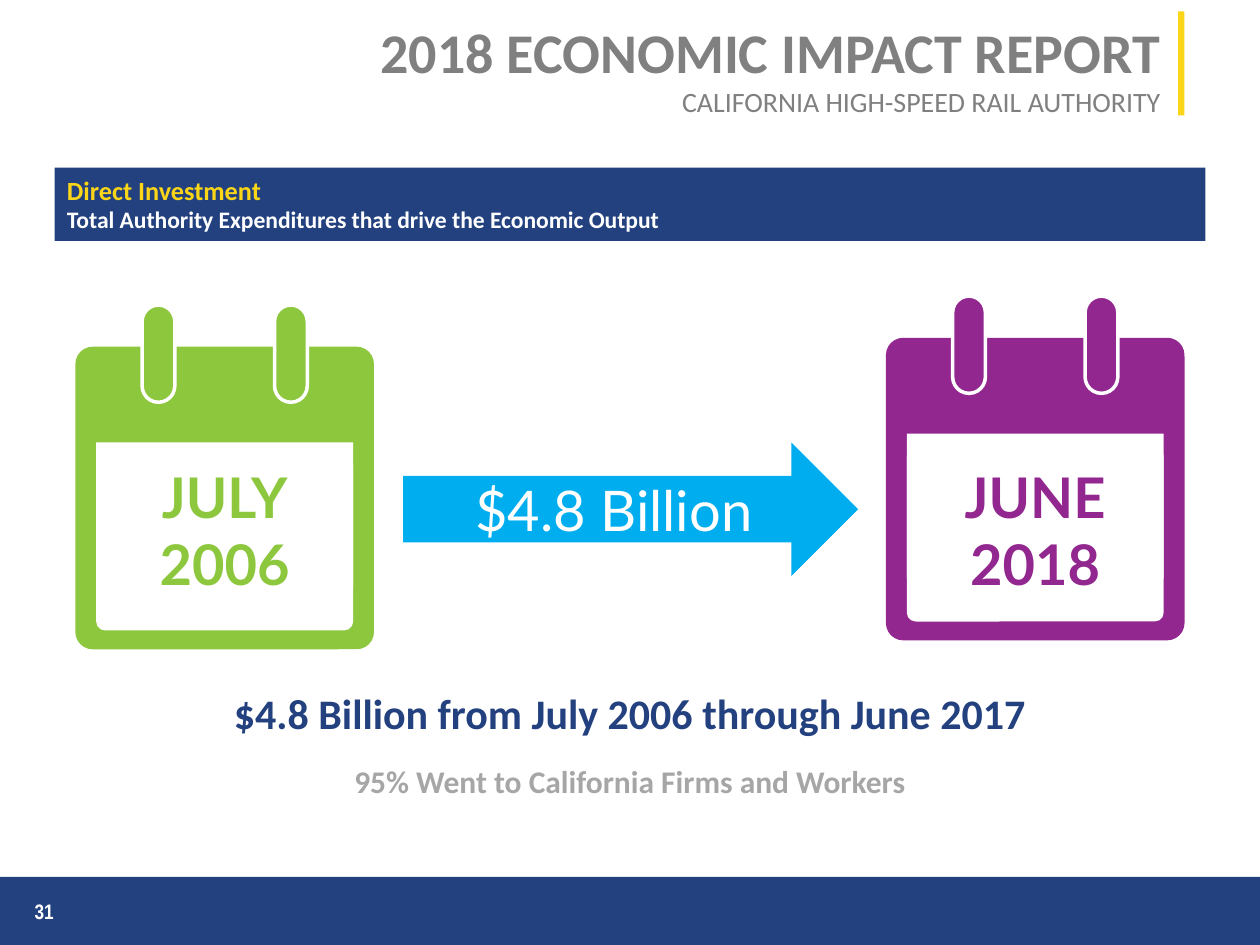
import pptx
import pptx.util
import pptx.dml.color
import pptx.enum.shapes
import pptx.enum.text
from pptx.util import Cm

SHAPE = pptx.enum.shapes.MSO_SHAPE
ALIGN = pptx.enum.text.PP_ALIGN
ANCHOR = pptx.enum.text.MSO_ANCHOR

THEME = {
    "navy": "23417F", "yellow": "FBD518", "gray": "808080", "silver": "A6A6A6",
    "green": "8DC73E", "purple": "92278F", "blue": "00ADEF", "white": "FFFFFF",
    "body": "Calibri", "display": "Lato", "narrow": "Arial Narrow",
    "huge": 32, "large": 24, "medium": 18, "subtitle": 16,
    "heading": 15, "detail": 13.5, "number": 12,
}

TITLE = [
    ("2018 ECONOMIC IMPACT REPORT", "body", "huge", "gray", True),
    ("CALIFORNIA HIGH-SPEED RAIL AUTHORITY", "body", "subtitle", "gray", False),
]
BANNER = [
    ("Direct Investment", "body", "heading", "yellow", True),
    ("Total Authority Expenditures that drive the Economic Output",
     "body", "detail", "white", True),
]
SUMMARY = [
    ("$4.8 Billion from July 2006 through June 2017", "body", "large", "navy", True),
    ("95% Went to California Firms and Workers", "body", "medium", "silver", True),
]
AMOUNT = [("$4.8 Billion", "display", "huge", "white", False)]
PAGE_NUMBER = [("31", "narrow", "number", "white", True)]
CALENDARS = [
    ("JULY\n2006", "green", 1.52, 6.99, 5.18),
    ("JUNE\n2018", "purple", 17.86, 6.81, 3.76),
]
CALENDAR_WIDTH, CALENDAR_HEIGHT = 6.02, 6.1
PANEL_WIDTH = 5.18
RING_WIDTH, RING_SPREAD = 0.66, 2.67
LABEL_TOP, LABEL_HEIGHT = 9.19, 3


def color(name):
    return pptx.dml.color.RGBColor.from_string(THEME[name])


def write(box, paragraphs, align=ALIGN.CENTER, anchor=ANCHOR.TOP, gap=0):
    frame = box.text_frame
    frame.word_wrap = True
    frame.vertical_anchor = anchor
    for index, (text, face, size, ink, bold) in enumerate(paragraphs):
        para = frame.add_paragraph() if index else frame.paragraphs[0]
        para.text = text
        para.alignment = align
        if index and gap:
            para.space_before = pptx.util.Pt(gap)
        para.font.name = THEME[face]
        para.font.size = pptx.util.Pt(THEME[size])
        para.font.bold = bold
        para.font.color.rgb = color(ink)


def add_shape(shapes, kind, left, top, width, height, fill, rounding=None, outline=None):
    shape = shapes.add_shape(kind, Cm(left), Cm(top), Cm(width), Cm(height))
    shape.shadow.inherit = False
    shape.fill.solid()
    shape.fill.fore_color.rgb = color(fill)
    if rounding is not None:
        shape.adjustments[0] = rounding
    if outline:
        shape.line.color.rgb = color(outline)
        shape.line.width = pptx.util.Pt(2)
    else:
        shape.line.fill.background()
    return shape


def add_text(shapes, left, top, width, height, paragraphs, **style):
    box = shapes.add_textbox(Cm(left), Cm(top), Cm(width), Cm(height))
    write(box, paragraphs, **style)


def add_calendar(page, label, ink, left, top, label_width):
    shapes = page.shapes.add_group_shape().shapes
    center = left + CALENDAR_WIDTH / 2
    panel_left = center - PANEL_WIDTH / 2
    add_shape(shapes, SHAPE.ROUNDED_RECTANGLE, left, top,
              CALENDAR_WIDTH, CALENDAR_HEIGHT, ink, 0.058)
    add_shape(shapes, SHAPE.ROUNDED_RECTANGLE, panel_left, top + 2.21,
              PANEL_WIDTH, 3.51, "white", 0.051)
    add_shape(shapes, SHAPE.RECTANGLE, panel_left, top + 1.93, PANEL_WIDTH, 2.92, "white")
    for side in (-1, 1):
        ring_left = center + side * RING_SPREAD / 2 - RING_WIDTH / 2
        add_shape(shapes, SHAPE.ROUNDED_RECTANGLE, ring_left, top - 0.84,
                  RING_WIDTH, 1.96, ink, 0.5, "white")
    add_text(shapes, center - label_width / 2, LABEL_TOP, label_width, LABEL_HEIGHT,
             [(label, "display", "huge", ink, True)])


def main():
    deck = pptx.Presentation()
    deck.slide_width, deck.slide_height = Cm(25.4), Cm(19.05)
    page = deck.slides.add_slide(deck.slide_layouts[6])
    shapes = page.shapes

    add_shape(shapes, SHAPE.RECTANGLE, 0, 17.68, 25.4, 1.37, "navy")
    add_shape(shapes, SHAPE.RECTANGLE, 23.75, 0.23, 0.13, 2.1, "yellow")
    banner = add_shape(shapes, SHAPE.RECTANGLE, 1.1, 3.38, 23.2, 1.48, "navy")
    write(banner, BANNER, align=ALIGN.LEFT)
    add_text(shapes, 1.75, 0.23, 21.9, 2.1, TITLE, align=ALIGN.RIGHT)

    for calendar in CALENDARS:
        add_calendar(page, *calendar)
    arrow = add_shape(shapes, SHAPE.RIGHT_ARROW, 8.13, 8.92, 9.17, 2.69, "blue")
    write(arrow, AMOUNT, anchor=ANCHOR.MIDDLE)

    add_text(shapes, 1.7, 13.74, 22, 2.54, SUMMARY, gap=THEME["detail"])
    add_text(shapes, 0, 17.55, 1.78, 1.63, PAGE_NUMBER, anchor=ANCHOR.MIDDLE)
    deck.save("out.pptx")


if __name__ == "__main__":
    main()
